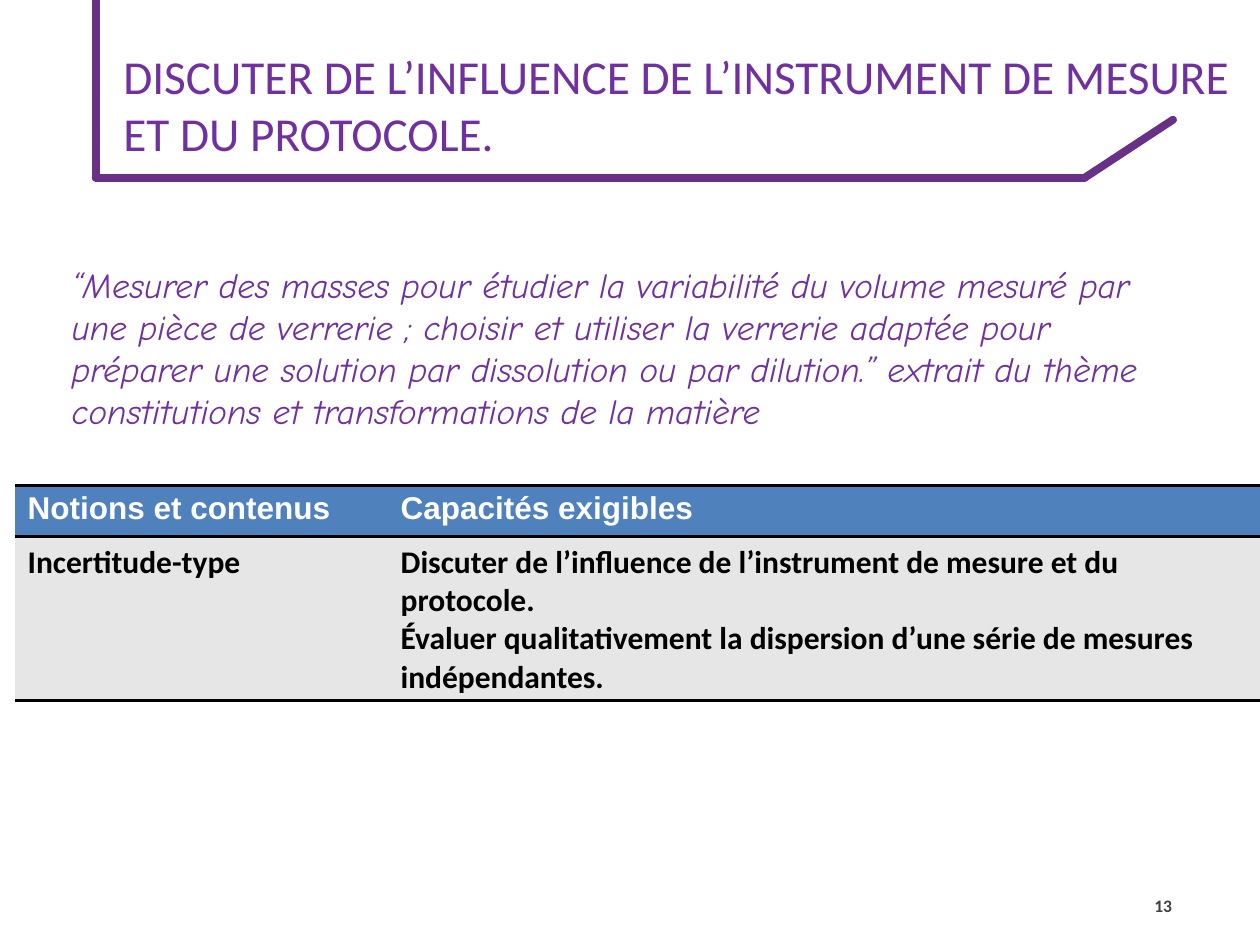
from lxml.etree import SubElement
from pptx import Presentation
from pptx.dml.color import RGBColor
from pptx.enum.shapes import MSO_CONNECTOR
from pptx.enum.text import MSO_ANCHOR, PP_ALIGN
from pptx.oxml import parse_xml
from pptx.oxml.ns import nsdecls, qn
from pptx.util import Inches, Pt

COLORS = {
    "frame": "683086",
    "purple": "7030A0",
    "header": "4F81BD",
    "body": "E6E6E6",
    "black": "000000",
    "white": "FFFFFF",
    "number": "404040",
}
NO_STYLE = "{2D5ABB26-0587-4C30-8999-92F81FD0307C}"


def color(name):
    """Return the named palette colour."""
    return RGBColor.from_string(COLORS[name])


def write_text(frame, text, size, fill, font="Calibri", bold=False, italic=False,
               align=PP_ALIGN.LEFT, anchor=MSO_ANCHOR.TOP):
    """Fill a text frame with one formatted paragraph per line of text."""
    frame.word_wrap = True
    frame.vertical_anchor = anchor
    for index, line in enumerate(text.split("\n")):
        paragraph = frame.add_paragraph() if index else frame.paragraphs[0]
        paragraph.alignment = align
        run = paragraph.add_run()
        run.text = line
        run.font.name = font
        run.font.size = Pt(size)
        run.font.bold = bold
        run.font.italic = italic
        run.font.color.rgb = color(fill)


def add_text(slide, box, text, **formatting):
    """Add a text box at the given left, top, width and height."""
    shape = slide.shapes.add_textbox(*map(Inches, box))
    write_text(shape.text_frame, text, **formatting)


def add_frame_line(slide, start, end):
    """Draw one thick line with round ends."""
    line = slide.shapes.add_connector(
        MSO_CONNECTOR.STRAIGHT, *map(Inches, (*start, *end)))
    line.line.color.rgb = color("frame")
    line.line.width = Pt(4.5)
    line.line._get_or_add_ln().set("cap", "rnd")
    SubElement(line._element.spPr, qn("a:effectLst"))


def add_title(slide, left, top, width, height):
    """Place the title and the open frame that runs round it."""
    add_text(slide, (left + 0.12, top + 0.24, width - 0.12, 1.17),
             "DISCUTER DE L’INFLUENCE DE L’INSTRUMENT DE MESURE ET DU PROTOCOLE.",
             size=27, fill="purple", anchor=MSO_ANCHOR.MIDDLE)
    bottom = top + height
    points = [(left, top), (left, bottom), (left + 7.85, bottom),
              (left + 8.55, bottom - 0.46)]
    for start, end in zip(points, points[1:]):
        add_frame_line(slide, start, end)


def set_cell_borders(cell):
    """Give a cell black lines at its top and bottom."""
    properties = cell._tc.get_or_add_tcPr()
    for index, tag in enumerate(("lnT", "lnB")):
        border = parse_xml(
            f'<a:{tag} {nsdecls("a")} w="{Pt(2)}"><a:solidFill>'
            f'<a:srgbClr val="{COLORS["black"]}"/></a:solidFill></a:{tag}>')
        properties.insert(index, border)


def add_skills_table(slide, left, top, width, height):
    """Place the table of notions and required skills."""
    rows = [
        ("Notions et contenus", "Capacités exigibles"),
        ("Incertitude-type",
         "Discuter de l’influence de l’instrument de mesure et du protocole.\n"
         "Évaluer qualitativement la dispersion d’une série de mesures indépendantes."),
    ]
    styles = [
        ("header", {"fill": "white", "font": "Arial"}),
        ("body", {"fill": "black", "font": "Calibri"}),
    ]
    table = slide.shapes.add_table(
        2, 2, *map(Inches, (left, top, width, height))).table
    table.first_row = table.horz_banding = False
    table._tbl.tblPr.find(qn("a:tableStyleId")).text = NO_STYLE
    for column, column_width in zip(table.columns, (2.96, width - 2.96)):
        column.width = Inches(column_width)
    for row, row_height in zip(table.rows, (0.41, height - 0.41)):
        row.height = Inches(row_height)
    for row, texts, (background, formatting) in zip(table.rows, rows, styles):
        for cell, text in zip(row.cells, texts):
            write_text(cell.text_frame, text, size=18, bold=True, **formatting)
            cell.fill.solid()
            cell.fill.fore_color.rgb = color(background)
            set_cell_borders(cell)


def main():
    """Build and save the presentation."""
    presentation = Presentation()
    presentation.slide_width = Inches(10)
    presentation.slide_height = Inches(7.5)
    slide = presentation.slides.add_slide(presentation.slide_layouts[6])
    add_title(slide, 0.76, 0, 9.24, 1.41)
    add_text(slide, (0.47, 2.04, 9.01, 1.17),
             "“Mesurer des masses pour étudier la variabilité du volume mesuré par "
             "une pièce de verrerie ; choisir et utiliser la verrerie adaptée pour "
             "préparer une solution par dissolution ou par dilution.” extrait du "
             "thème constitutions et transformations de la matière",
             size=20, fill="purple", font="Comic Neue", italic=True)
    add_skills_table(slide, 0.12, 3.85, 9.88, 1.71)
    add_text(slide, (8.91, 6.99, 0.49, 0.4), "13", size=10, fill="number",
             bold=True, align=PP_ALIGN.RIGHT, anchor=MSO_ANCHOR.MIDDLE)
    presentation.save("out.pptx")


if __name__ == "__main__":
    main()
